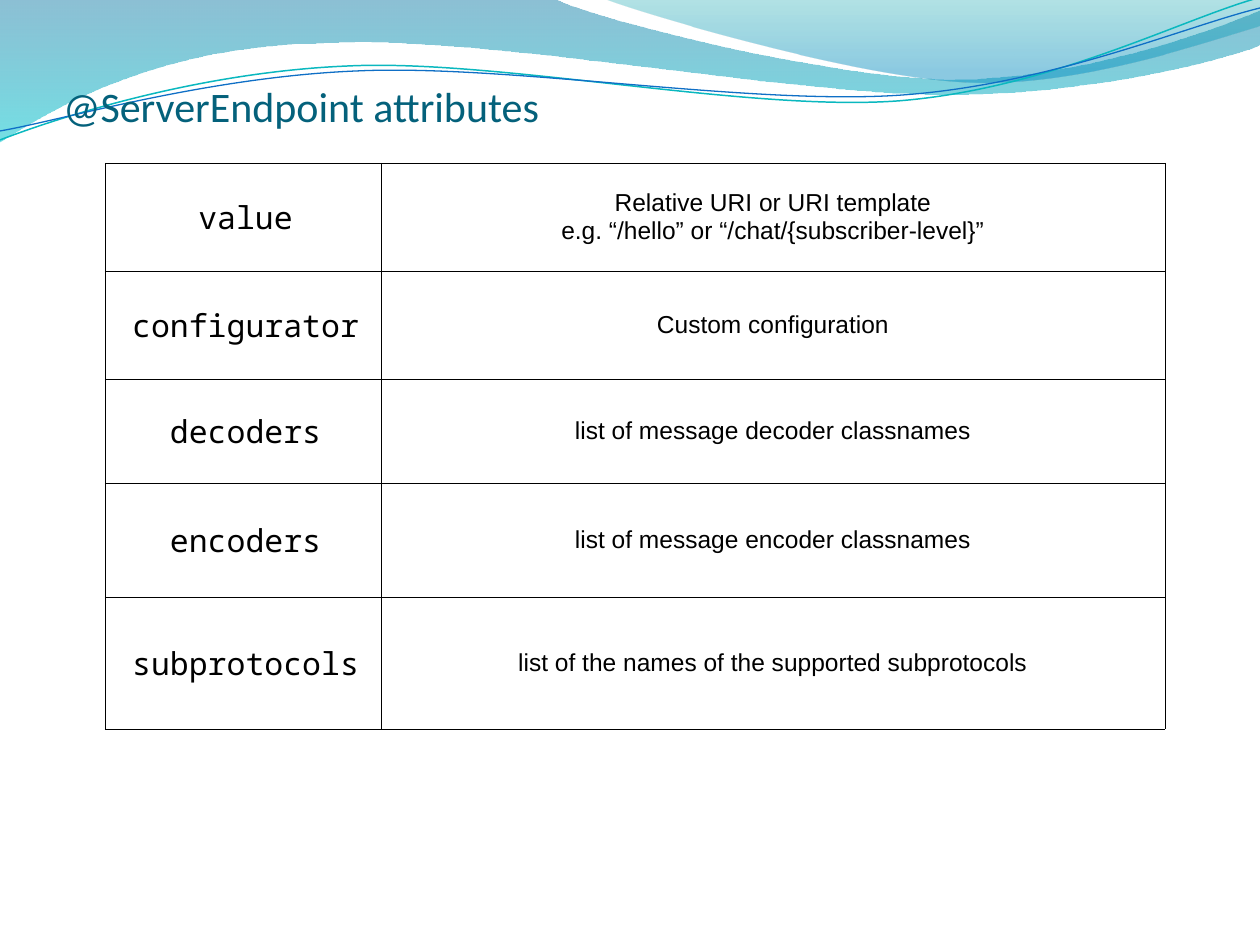
from lxml.etree import SubElement
from pptx import Presentation
from pptx.dml.color import RGBColor
from pptx.enum.text import MSO_ANCHOR as Anchor, PP_ALIGN as Align
from pptx.oxml.ns import qn
from pptx.util import Emu, Pt

PX = 914400 // 126
COLORS = {
    "title": "04617B", "text": "000000", "border": "000000",
    "deep": "0074A1", "aqua": "00C6CF", "teal": "00A1A9", "sky": "008BBF",
    "teal_line": "0AB8BF", "blue_line": "0F6FC6",
}
FILLED_WAVES = [
    ([(0, 0), "L", (554, -1), "C", (600, 21), (837, 79), (955, 79),
      "C", (1075, 79), (1207, 33), (1260, 11), "L", (1261, 45),
      "C", (1239, 55), (1096, 96), (940, 94), "C", (784, 94), (481, 35), (324, 43),
      "C", (163, 45), (58, 105), (-1, 142)],
     [(0, "deep", 45), (1, "aqua", 55)]),
    ([(604, -1), "C", (641, 14), (859, 78), (969, 82),
      "C", (1079, 87), (1211, 40), (1260, 26), "L", (1260, 0)],
     [(0, "teal", 30), (0.8, "sky", 45)]),
]
LINE_WAVES = [
    ([(0, 140), "C", (60, 117), (199, 72), (349, 66),
      "C", (498, 59), (747, 112), (898, 101), "C", (1050, 89), (1182, 19), (1258, -2)],
     "teal_line", 0.85),
    ([(0, 131), "C", (59, 121), (207, 77), (357, 71),
      "C", (508, 64), (752, 106), (903, 95), "C", (1053, 84), (1186, 26), (1260, 8)],
     "blue_line", 0.75),
]
COLUMN_WIDTHS = [276, 784]
ROWS = [
    (108, "value", "Relative URI or URI template\ne.g. “/hello” or “/chat/{subscriber-level}”"),
    (108, "configurator", "Custom configuration"),
    (104, "decoders", "list of message decoder classnames"),
    (114, "encoders", "list of message encoder classnames"),
    (132, "subprotocols", "list of the names of the supported subprotocols"),
]


def px(length):
    """Turn pixels into EMU."""
    return Emu(length * PX)


def color(name):
    """Look up a colour by name."""
    return RGBColor.from_string(COLORS[name])


def set_font(paragraph, name, size, color_name):
    """Format every run of a paragraph."""
    for run in paragraph.runs:
        run.font.name = name
        run.font.size = Pt(size)
        run.font.color.rgb = color(color_name)


def add_wave(slide, outline, close):
    """Draw an outline of straight (L) and curved (C) segments."""
    points = [item for item in outline if not isinstance(item, str)]
    segments = [item for item in outline if isinstance(item, str)]
    builder = slide.shapes.build_freeform(*points[0], scale=PX)
    builder.add_line_segments(points[1:], close=close)
    shape = builder.convert_to_shape()
    shape.shadow.inherit = False
    lines = iter(list(shape.element.iter(qn("a:lnTo"))))
    for segment in segments:
        line = next(lines)
        if segment == "C":
            line.addprevious(curve := line.makeelement(qn("a:cubicBezTo")))
            for part in (line, next(lines), next(lines)):
                curve.append(part[0])
                part.getparent().remove(part)
    return shape


def add_filled_wave(slide, outline, stops):
    """Add a wave with a translucent downward gradient."""
    shape = add_wave(slide, outline, True)
    shape.line.fill.background()
    shape.fill.gradient()
    shape.fill.gradient_angle = 270
    elements = shape.element.spPr.iter(qn("a:gs"))
    for stop, element, (position, name, opacity) in zip(shape.fill.gradient_stops, elements, stops):
        stop.position = position
        stop.color.rgb = color(name)
        SubElement(element[0], qn("a:alpha"), val=str(opacity * 1000))


def add_line_wave(slide, outline, name, width):
    """Add a thin open wave."""
    shape = add_wave(slide, outline, False)
    shape.fill.background()
    shape.line.color.rgb = color(name)
    shape.line.width = Pt(width)


def format_title(slide, text):
    """Place the title in front of the waves."""
    title = slide.shapes.title
    slide.shapes.element.append(title.element)
    title.left, title.top, title.width, title.height = px(63), px(74), px(1134), px(158)
    frame = title.text_frame
    frame.text = text
    frame.vertical_anchor = Anchor.TOP
    frame.margin_left, frame.margin_top, frame.margin_right, frame.margin_bottom = 0, px(6), px(5), 0
    frame.paragraphs[0].alignment = Align.LEFT
    set_font(frame.paragraphs[0], "Calibri", 24, "title")


def add_borders(cell):
    """Give a cell thin borders on all sides."""
    properties = cell._tc.get_or_add_tcPr()
    for index, side in enumerate(("lnL", "lnR", "lnT", "lnB")):
        line = properties.makeelement(qn(f"a:{side}"), {"w": str(Pt(0.25))})
        fill = SubElement(line, qn("a:solidFill"))
        SubElement(fill, qn("a:srgbClr"), val=COLORS["border"])
        properties.insert(index, line)


def fill_cell(cell, text, font, size, indent):
    """Write and format the text of a cell."""
    cell.text = text
    cell.fill.background()
    cell.vertical_anchor = Anchor.MIDDLE
    cell.margin_left = cell.margin_right = cell.margin_top = cell.margin_bottom = px(8)
    for paragraph in cell.text_frame.paragraphs:
        paragraph.alignment = Align.CENTER
        properties = paragraph._p.get_or_add_pPr()
        properties.set("marL", str(px(indent)))
        properties.set("indent", "0")
        tabs = SubElement(properties, qn("a:tabLst"))
        SubElement(tabs, qn("a:tab"), pos=str(px(126)), algn="l")
        set_font(paragraph, font, size, "text")
    add_borders(cell)


def add_attribute_table(slide):
    """Add the table of attributes and their meanings."""
    height = sum(row[0] for row in ROWS)
    frame = slide.shapes.add_table(
        len(ROWS), 2, px(105), px(163), px(sum(COLUMN_WIDTHS)), px(height))
    table = frame.table
    table.first_row = table.horz_banding = False
    for column, width in zip(table.columns, COLUMN_WIDTHS):
        column.width = px(width)
    for index, (row_height, attribute, meaning) in enumerate(ROWS):
        table.rows[index].height = px(row_height)
        fill_cell(table.cell(index, 0), attribute, "Noto Sans Mono", 18, 5)
        fill_cell(table.cell(index, 1), meaning, "Arial", 14, 0)


def main():
    """Build and save the slide."""
    presentation = Presentation()
    presentation.slide_width, presentation.slide_height = px(1260), px(945)
    slide = presentation.slides.add_slide(presentation.slide_layouts[5])
    for outline, stops in FILLED_WAVES:
        add_filled_wave(slide, outline, stops)
    for outline, name, width in LINE_WAVES:
        add_line_wave(slide, outline, name, width)
    format_title(slide, "@ServerEndpoint attributes")
    add_attribute_table(slide)
    presentation.save("out.pptx")


if __name__ == "__main__":
    main()
